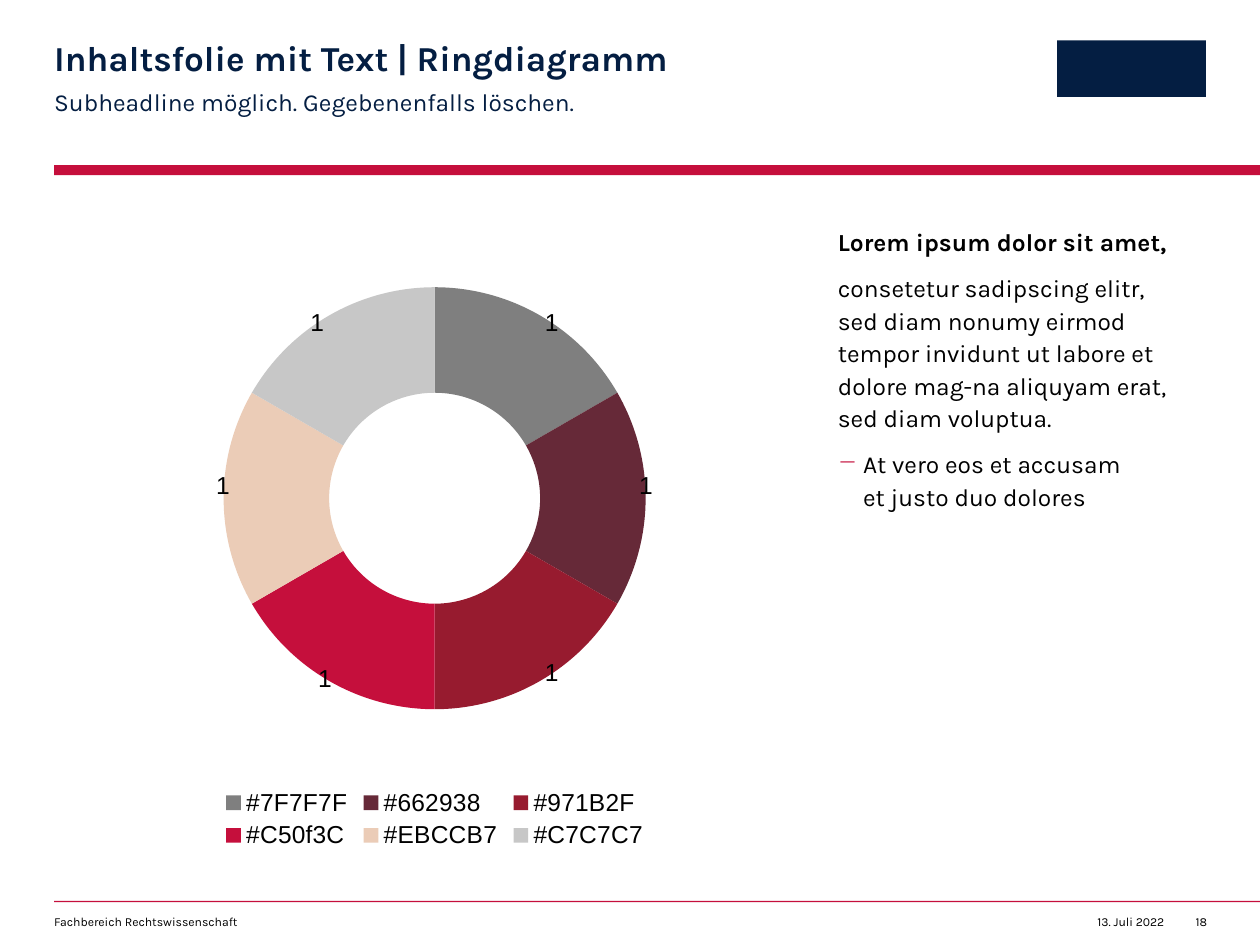
from lxml import etree
from pptx import Presentation
from pptx.chart.data import CategoryChartData
from pptx.dml.color import RGBColor
from pptx.enum.chart import XL_CHART_TYPE as ChartType, XL_LEGEND_POSITION as LegendPos
from pptx.enum.shapes import MSO_SHAPE as Shape
from pptx.enum.text import PP_ALIGN as Align
from pptx.oxml import parse_xml
from pptx.oxml.ns import nsdecls, qn
from pptx.util import Inches, Pt

RED, NAVY, BLACK = "C50F3C", "041E42", "000000"
MARGIN, CONTENT_TOP, CONTENT_HEIGHT = 0.43, 1.78, 5


def style(font, size, color=BLACK, bold=False, name="Karla"):
    font.name, font.size, font.bold = name, Pt(size), bold
    font.color.rgb = RGBColor.from_string(color)


def chart_layout(x, y, extra=""):
    """Return a manual layout element; x and y are fractions of the chart."""
    return parse_xml(
        f'<c:layout {nsdecls("c")}><c:manualLayout>{extra}'
        f'<c:x val="{x}"/><c:y val="{y}"/>'
        '</c:manualLayout></c:layout>')


prs = Presentation()
prs.slide_width, prs.slide_height = Inches(10), Inches(7.5)
slide = prs.slides.add_slide(prs.slide_layouts[6])
shapes = slide.shapes

# Header bar, footer rule and a plain block where the emblem belongs
for left, top, width, height, color in [
    (MARGIN, 1.31, 9.57, 0.08, RED),
    (MARGIN, 7.15, 9.57, 0.01, RED),
    (8.39, 0.32, 1.18, 0.45, NAVY),
]:
    block = shapes.add_shape(Shape.RECTANGLE, Inches(left), Inches(top),
                             Inches(width), Inches(height))
    block.fill.solid()
    block.fill.fore_color.rgb = RGBColor.from_string(color)
    block.line.fill.background()
    block.shadow.inherit = False

# Text: box, alignment, line spacing, then paragraphs of (text, size, color, bold)
LEFT, RIGHT = Align.LEFT, Align.RIGHT
body = [
    ("Lorem ipsum dolor sit amet,", 14, BLACK, True),
    ("consetetur sadipscing elitr, sed diam nonumy eirmod tempor invidunt ut "
     "labore et dolore mag-na aliquyam erat, sed diam voluptua.", 14, BLACK, False),
    ("At vero eos et accusam\net justo duo dolores", 14, BLACK, False),
]
texts = [
    (MARGIN, 0.33, 5.61, 0.3, LEFT, 0.9,
     [("Inhaltsfolie mit Text | Ringdiagramm", 20, NAVY, True)]),
    (MARGIN, 0.67, 5.61, 0.24, LEFT, 1.1,
     [("Subheadline möglich. Gegebenenfalls löschen.", 14, NAVY, False)]),
    (MARGIN, 7.26, 4.49, 0.12, LEFT, 1,
     [("Fachbereich Rechtswissenschaft", 7, BLACK, False)]),
    (8.65, 7.26, 0.59, 0.12, RIGHT, 1, [("13. Juli 2022", 7, BLACK, False)]),
    (9.38, 7.26, 0.2, 0.12, RIGHT, 1, [("18", 7, BLACK, False)]),
    (6.65, CONTENT_TOP, 2.93, CONTENT_HEIGHT, LEFT, 1.1, body),
]
for left, top, width, height, align, spacing, paragraphs in texts:
    frame = shapes.add_textbox(Inches(left), Inches(top),
                               Inches(width), Inches(height)).text_frame
    frame.word_wrap = True
    frame.margin_left = frame.margin_top = frame.margin_bottom = 0
    frame.margin_right = Inches(0.2 if paragraphs is body else 0)
    for number, (text, size, color, bold) in enumerate(paragraphs):
        paragraph = frame.add_paragraph() if number else frame.paragraphs[0]
        paragraph.alignment, paragraph.line_spacing = align, spacing
        paragraph.space_after = Pt(8 if size == 14 else 0)
        for line_number, line in enumerate(text.split("\n")):
            if line_number:
                paragraph.add_line_break()
            run = paragraph.add_run()
            run.text = line
            style(run.font, size, color, bold)

# The last paragraph of the body text is a bullet point
bullet_point = paragraph
bullet_point.level = 1
properties = bullet_point._p.get_or_add_pPr()
properties.set("marL", str(Inches(0.2)))
properties.set("indent", str(-Inches(0.2)))
bullet_color = etree.SubElement(properties, qn("a:buClr"))
etree.SubElement(bullet_color, qn("a:srgbClr"), val=RED)
etree.SubElement(properties, qn("a:buChar"), char="−")

# Ring chart: category, and offset of its label from the middle of the ring
segments = [
    ("#7F7F7F", 0.05, -0.06),
    ("#662938", 0.07, -0.02),
    ("#971B2F", 0.05, 0.06),
    ("#C50f3C", -0.04, 0.07),
    ("#EBCCB7", -0.07, -0.02),
    ("#C7C7C7", -0.05, -0.06),
]
data = CategoryChartData()
data.categories = [name for name, _, _ in segments]
data.add_series("Series 1", [1] * len(segments))
chart = shapes.add_chart(ChartType.DOUGHNUT, Inches(MARGIN), Inches(CONTENT_TOP),
                         Inches(6.04), Inches(CONTENT_HEIGHT), data).chart
chart.has_title = False
style(chart.font, 10, name="Arial")
chart.has_legend = True
chart.legend.position = LegendPos.BOTTOM
chart.legend.include_in_layout = False
style(chart.legend.font, 14, name="Arial")

ring = chart.plots[0]
ring.vary_by_categories = True
ring._element.find(qn("c:holeSize")).set("val", "80")
series = ring.series[0]
series.data_labels.show_value = True
style(series.data_labels.font, 14, name="Arial")
for index, (name, _, _) in enumerate(segments):
    point = series.points[index]
    point.format.fill.solid()
    point.format.fill.fore_color.rgb = RGBColor.from_string(name[1:].upper())
    point.format.line.fill.background()
    style(point.data_label.font, 14, name="Arial")
labels = series._element.iter(qn("c:dLbl"))
for label, (_, x, y) in zip(list(labels), segments):
    label.insert(1, chart_layout(x, y))

plot_area = ring._element.getparent()
for automatic in plot_area.findall(qn("c:layout")):
    plot_area.remove(automatic)
plot_layout = chart_layout(
    0.13, 0.1, '<c:layoutTarget val="inner"/><c:xMode val="edge"/><c:yMode val="edge"/>')
for side, share in [("w", 0.74), ("h", 0.67)]:
    etree.SubElement(plot_layout[0], qn(f"c:{side}"), val=str(share))
plot_area.insert(0, plot_layout)

prs.save("out.pptx")
